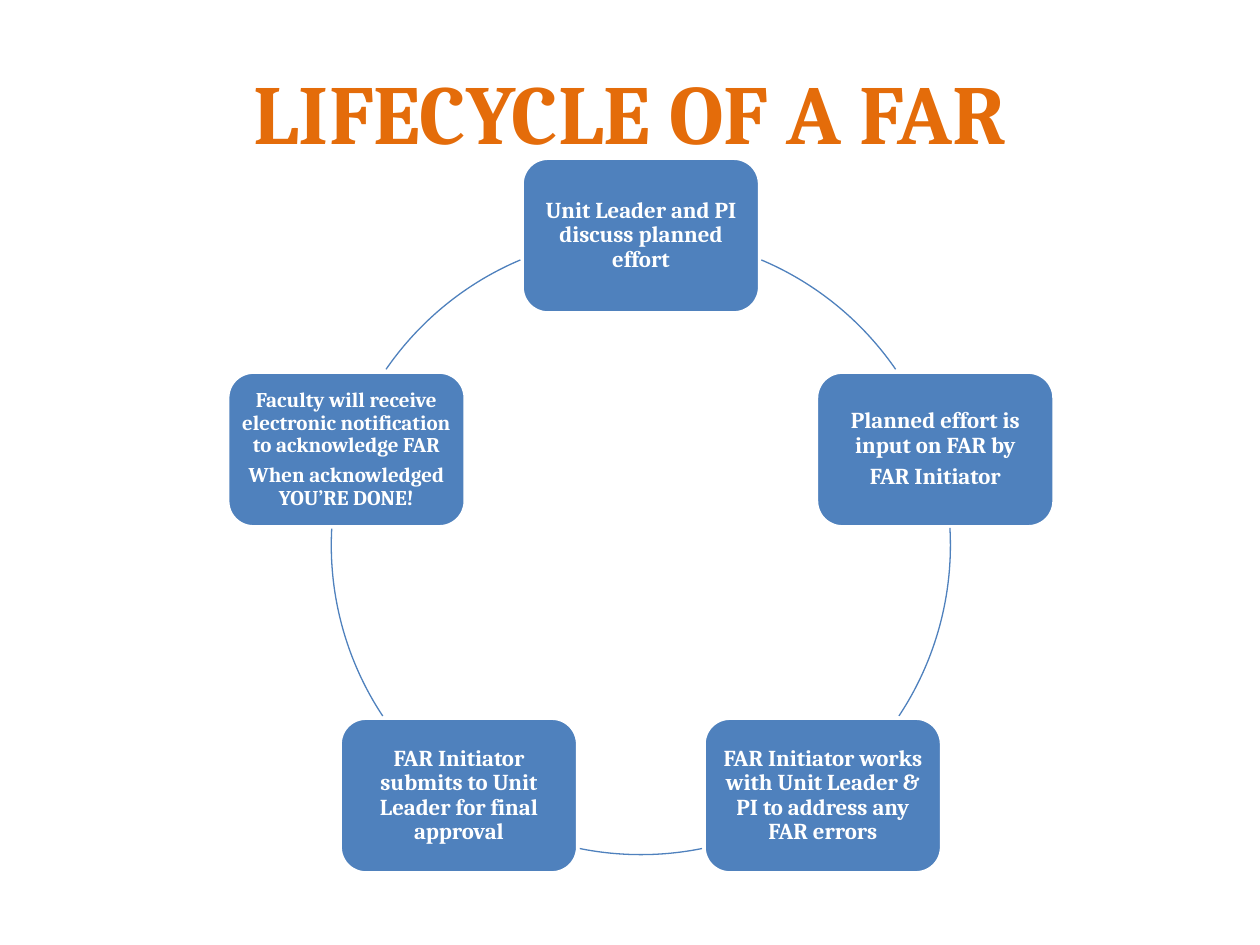
import math

import pptx
import pptx.dml.color
import pptx.enum.shapes
import pptx.enum.text
import pptx.util

Cm = pptx.util.Cm
Pt = pptx.util.Pt
SHAPES = pptx.enum.shapes.MSO_SHAPE
CENTER = pptx.enum.text.PP_ALIGN.CENTER
MIDDLE = pptx.enum.text.MSO_ANCHOR.MIDDLE

ORANGE, BLUE, WHITE = "E46C0A", "4F81BD", "FFFFFF"
CENTER_X, CENTER_Y, RADIUS = 12.92, 10.99, 6.24
BOX_WIDTH, BOX_HEIGHT = 4.79, 3.12

# Clockwise from the top: text size and paragraphs
STEPS = [
    (13, ["Unit Leader and PI discuss planned effort"]),
    (13, ["Planned effort is input on FAR by", "FAR Initiator"]),
    (13, ["FAR Initiator works with Unit Leader & PI to address any FAR errors"]),
    (13, ["FAR Initiator submits to Unit Leader for final approval"]),
    (12, ["Faculty will receive electronic notification to acknowledge FAR",
          "When acknowledged YOU’RE DONE!"]),
]
# Start and end in degrees, clockwise from three o'clock
ARCS = [(292.9, 325.4), (356.8, 33.5), (78.6, 101.4), (146.5, 183.2), (214.6, 247.1)]


def color(hex_value):
    return pptx.dml.color.RGBColor.from_string(hex_value)


def set_attributes(target, values):
    for name, value in values.items():
        setattr(target, name, value)


def write_text(shape, lines, size, hex_value, paragraph_format):
    """Fill a shape with centred bold text, one paragraph per line."""
    frame = shape.text_frame
    frame.text = "\n".join(lines)
    set_attributes(frame, {"word_wrap": True, "vertical_anchor": MIDDLE})
    for paragraph in frame.paragraphs:
        set_attributes(paragraph, {"alignment": CENTER, **paragraph_format})
        for run in paragraph.runs:
            set_attributes(run.font, {"name": "Cambria", "size": Pt(size), "bold": True})
            run.font.color.rgb = color(hex_value)


def set_line(shape, hex_value, width):
    shape.shadow.inherit = False
    shape.line.color.rgb = color(hex_value)
    shape.line.width = Pt(width)


def add_title(slide, text):
    title = slide.shapes.title
    set_attributes(title, {"left": Cm(1.27), "top": Cm(0.64),
                           "width": Cm(22.86), "height": Cm(3.18)})
    write_text(title, [text], 48, ORANGE, {})


def add_step(slide, index, size, lines):
    """Add a box centred on the circle at its share of a full turn."""
    angle = 2 * math.pi * index / len(STEPS)
    left = CENTER_X + RADIUS * math.sin(angle) - BOX_WIDTH / 2
    top = CENTER_Y - RADIUS * math.cos(angle) - BOX_HEIGHT / 2
    box = slide.shapes.add_shape(SHAPES.ROUNDED_RECTANGLE, Cm(left), Cm(top),
                                 Cm(BOX_WIDTH), Cm(BOX_HEIGHT))
    box.fill.solid()
    box.fill.fore_color.rgb = color(BLUE)
    set_line(box, WHITE, 2)
    sides = ("left", "top", "right", "bottom")
    set_attributes(box.text_frame, {f"margin_{side}": Cm(0.13) for side in sides})
    write_text(box, lines, size, WHITE, {"line_spacing": 0.9, "space_after": Pt(4)})


def add_arc(slide, start, end):
    arc = slide.shapes.add_shape(SHAPES.ARC, Cm(CENTER_X - RADIUS), Cm(CENTER_Y - RADIUS),
                                 Cm(2 * RADIUS), Cm(2 * RADIUS))
    # Angles are stored in 1/60000 degree; adjustments count in 100000s
    for index, angle in enumerate((start, end)):
        arc.adjustments[index] = angle * 0.6
    arc.fill.background()
    set_line(arc, BLUE, 0.75)


def main():
    presentation = pptx.Presentation()
    set_attributes(presentation, {"slide_width": Cm(25.4), "slide_height": Cm(19.05)})
    slide = presentation.slides.add_slide(presentation.slide_layouts[5])
    add_title(slide, "LIFECYCLE OF A FAR")
    for index, ((size, lines), (start, end)) in enumerate(zip(STEPS, ARCS)):
        add_step(slide, index, size, lines)
        add_arc(slide, start, end)
    presentation.save("out.pptx")


if __name__ == "__main__":
    main()
